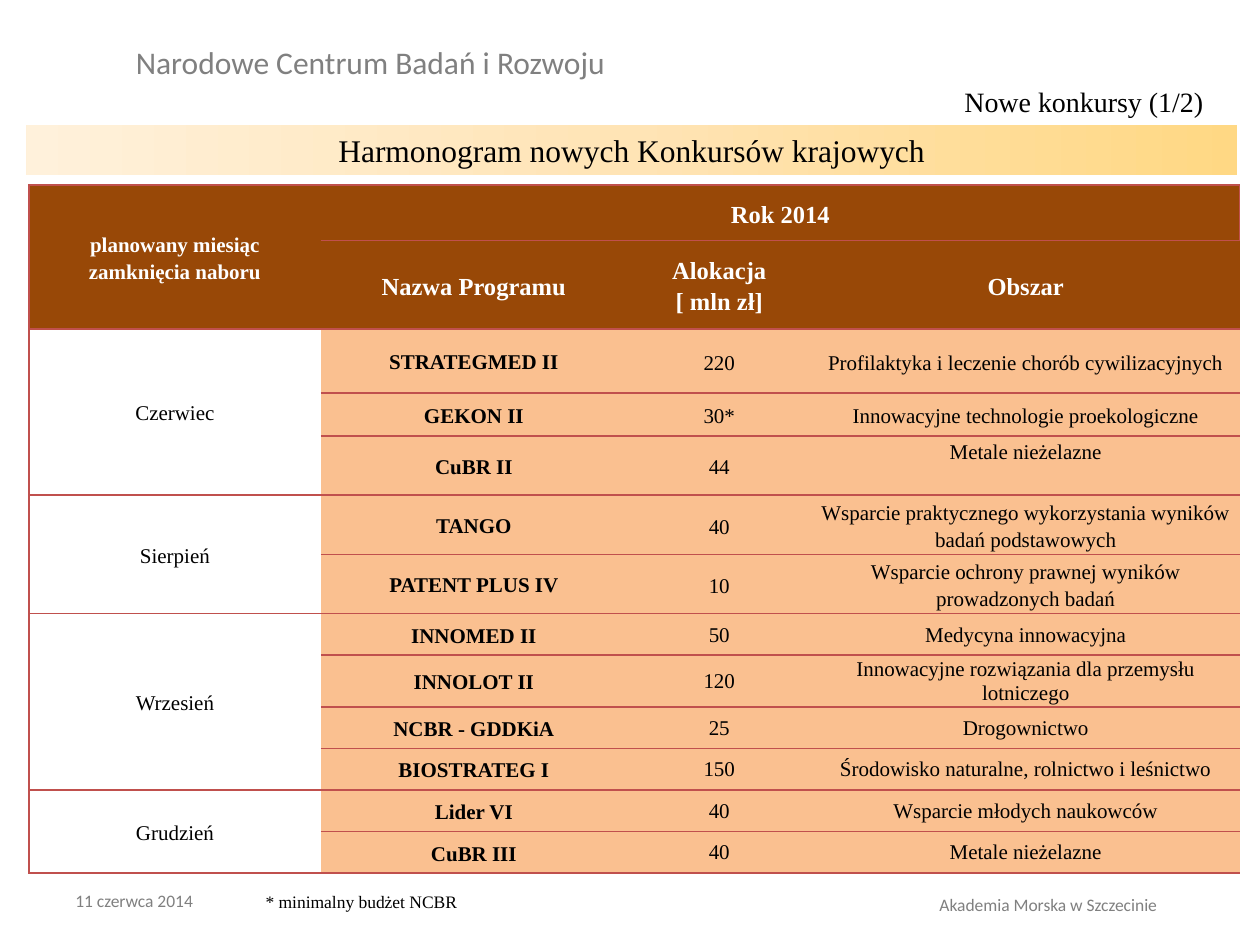
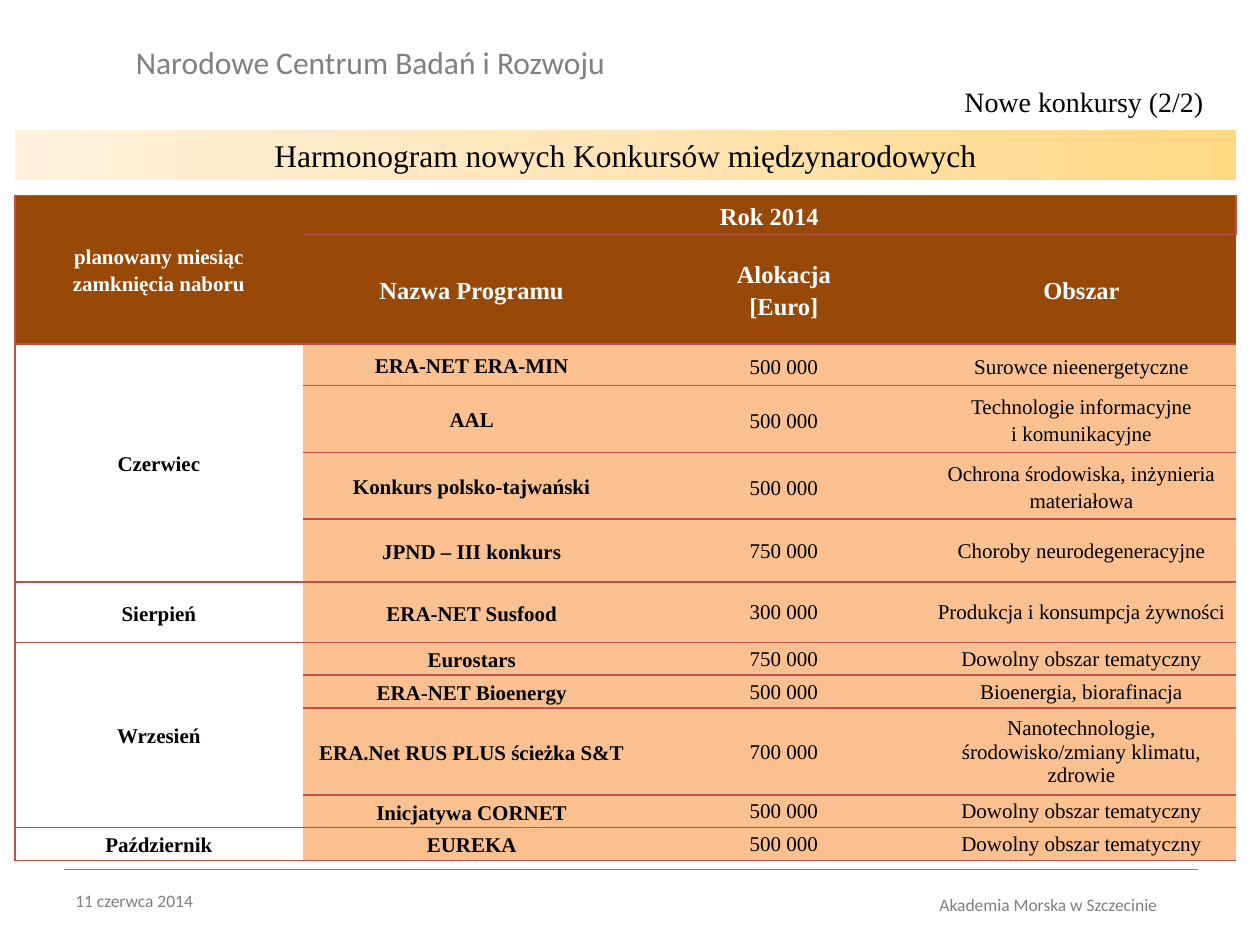
from copy import deepcopy

from lxml.etree import SubElement
from pptx import Presentation
from pptx.dml.color import RGBColor
from pptx.enum.shapes import MSO_CONNECTOR, MSO_SHAPE
from pptx.enum.text import MSO_ANCHOR, MSO_AUTO_SIZE, PP_ALIGN
from pptx.oxml.ns import qn
from pptx.util import Inches, Pt

WIDTH, HEIGHT = Inches(10), Inches(7.5)
COLUMN, ROW = WIDTH / 100, HEIGHT / 75
PLAIN_TABLE = "{2D5ABB26-0587-4C30-8999-92F81FD0307C}"
SERIF, SANS = "Times New Roman", "Calibri"
BLACK, WHITE, GRAY = "000000", "FFFFFF", "808080"
BROWN, PEACH, RED = "984807", "FAC090", "C0504D"
BAND_STOPS = [(0, "FFD884"), (0.5, "FFE4B5"), (1, "FFF1DB")]
MARGINS = ("margin_left", "margin_top", "margin_right", "margin_bottom")
WIDE_INSETS = (0.07, 0, 0.07, 0)
TIGHT_INSETS = (0.01, 0.01, 0.01, 0)

NATIONAL = {
    "heading": "Nowe konkursy (1/2)",
    "band": "Harmonogram nowych Konkursów krajowych",
    "band_box": (2.1, 9.9, 96.1, 4),
    "table_box": (2.3, 14.7, 96.1, 54.6),
    "columns": [2.32, 2.43, 1.47, 3.4],
    "rows": [0.44, 0.7, 0.51, 0.34, 0.47, 0.47, 0.47, 0.33, 0.41, 0.33, 0.33, 0.33, 0.33],
    "allocation": "Alokacja\n[ mln zł]",
    "bold_months": False,
    "spaced_rows": 5,
    "top_area": "CuBR II",
    "note": "* minimalny budżet NCBR",
    "months": [
        ("Czerwiec", [
            ("STRATEGMED II", "220", "Profilaktyka i leczenie chorób cywilizacyjnych"),
            ("GEKON II", "30*", "Innowacyjne technologie proekologiczne"),
            ("CuBR II", "44", "Metale nieżelazne")]),
        ("Sierpień", [
            ("TANGO", "40", "Wsparcie praktycznego wykorzystania wyników badań podstawowych"),
            ("PATENT PLUS IV", "10", "Wsparcie ochrony prawnej wyników prowadzonych badań")]),
        ("Wrzesień", [
            ("INNOMED II", "50", "Medycyna innowacyjna"),
            ("INNOLOT II", "120", "Innowacyjne rozwiązania dla przemysłu lotniczego"),
            ("NCBR - GDDKiA", "25", "Drogownictwo"),
            ("BIOSTRATEG I", "150", "Środowisko naturalne, rolnictwo i leśnictwo")]),
        ("Grudzień", [
            ("Lider VI", "40", "Wsparcie młodych naukowców"),
            ("CuBR III", "40", "Metale nieżelazne")]),
    ],
}

INTERNATIONAL = {
    "heading": "Nowe konkursy (2/2)",
    "band": "Harmonogram nowych Konkursów międzynarodowych",
    "band_box": (1.2, 10.3, 96.9, 4),
    "table_box": (1.2, 15.5, 96.9, 52.8),
    "columns": [2.28, 2.68, 2.27, 2.45],
    "rows": [0.31, 0.87, 0.33, 0.53, 0.53, 0.5, 0.48, 0.26, 0.26, 0.69, 0.26, 0.26],
    "allocation": "Alokacja\v[Euro]",
    "bold_months": True,
    "spaced_rows": 3,
    "top_area": None,
    "note": None,
    "months": [
        ("Czerwiec", [
            ("ERA-NET ERA-MIN", "500 000", "Surowce nieenergetyczne"),
            ("AAL", "500 000", "Technologie informacyjne\vi komunikacyjne"),
            ("Konkurs polsko-tajwański", "500 000", "Ochrona środowiska, inżynieria materiałowa"),
            ("JPND – III konkurs", "750 000", "Choroby neurodegeneracyjne")]),
        ("Sierpień", [
            ("ERA-NET Susfood", "300 000", "Produkcja i konsumpcja żywności")]),
        ("Wrzesień", [
            ("Eurostars", "750 000", "Dowolny obszar tematyczny"),
            ("ERA-NET Bioenergy", "500 000", "Bioenergia, biorafinacja"),
            ("ERA.Net RUS PLUS ścieżka S&T", "700 000",
             "Nanotechnologie, środowisko/zmiany klimatu, zdrowie"),
            ("Inicjatywa CORNET", "500 000", "Dowolny obszar tematyczny")]),
        ("Październik", [
            ("EUREKA", "500 000", "Dowolny obszar tematyczny")]),
    ],
}


def color(value):
    return RGBColor.from_string(value)


def place(box):
    left, top, width, height = box
    return [round(size) for size in (left * COLUMN, top * ROW, width * COLUMN, height * ROW)]


def set_all(target, values):
    for name, value in values.items():
        setattr(target, name, value)


def write(frame, text, size, ink=BLACK, font=SERIF, bold=False,
          align=PP_ALIGN.LEFT, spacing=None):
    frame.text = text
    for para in frame.paragraphs:
        set_all(para, {"alignment": align, "line_spacing": spacing})
        for span in para.runs:
            set_all(span.font, {"size": Pt(size), "name": font, "bold": bold})
            span.font.color.rgb = color(ink)


def add_label(page, box, text, anchor=MSO_ANCHOR.MIDDLE, **style):
    frame = page.shapes.add_textbox(*place(box)).text_frame
    set_all(frame, {"word_wrap": True, "vertical_anchor": anchor})
    write(frame, text, 10, **style)
    return frame


def add_panel(page, box, text, anchor, **style):
    panel = page.shapes.add_shape(MSO_SHAPE.RECTANGLE, *place(box))
    panel.shadow.inherit = False
    panel.line.fill.background()
    panel.text_frame.vertical_anchor = anchor
    write(panel.text_frame, text, 18, **style)
    return panel


def add_masthead(page, heading):
    title = page.shapes.title
    set_all(title, dict(zip(("left", "top", "width", "height"), place((42.9, 6.2, 53.6, 3.7)))))
    set_all(title.text_frame, {"auto_size": MSO_AUTO_SIZE.NONE, "vertical_anchor": MSO_ANCHOR.TOP})
    write(title.text_frame, heading, 16, align=PP_ALIGN.RIGHT)
    institution = add_panel(page, (9.8, 2.9, 56.7, 3.5), "Narodowe Centrum Badań i Rozwoju",
                            MSO_ANCHOR.TOP, ink=GRAY, font=SANS)
    institution.fill.solid()
    institution.fill.fore_color.rgb = color(WHITE)


def add_band(page, box, text):
    band = add_panel(page, box, text, MSO_ANCHOR.MIDDLE, align=PP_ALIGN.CENTER)
    band.fill.gradient()
    band.fill.gradient_angle = 180
    stops = band._element.spPr.find(".//" + qn("a:gsLst"))
    stops.insert(1, deepcopy(stops[0]))
    for stop, (position, shade) in zip(band.fill.gradient_stops, BAND_STOPS):
        stop.position = position
        stop.color.rgb = color(shade)


def add_footer(page, note):
    left, top, width, _ = place((5.1, 69, 90, 0))
    rule = page.shapes.add_connector(MSO_CONNECTOR.STRAIGHT, left, top, left + width, top)
    rule.line.color.rgb = color(GRAY)
    rule.line.width = Pt(0.75)
    SubElement(rule._element.spPr, qn("a:effectLst"))
    add_label(page, (5, 69.5, 23.3, 4), "11 czerwca 2014", ink=GRAY, font=SANS)
    host = add_label(page, (70.5, 69.8, 24.4, 4), "Akademia Morska w Szczecinie",
                     ink=GRAY, font=SANS, align=PP_ALIGN.CENTER)
    host.margin_right = 0
    if note:
        add_label(page, (20.1, 70.2, 37.8, 2.7), note, MSO_ANCHOR.TOP)


def add_borders(cell, sides):
    properties = cell._tc.get_or_add_tcPr()
    for index, side in enumerate(side for side in "LRTB" if side in sides):
        line = properties.makeelement(qn("a:ln" + side), {"w": str(Pt(1))})
        SubElement(SubElement(line, qn("a:solidFill")), qn("a:srgbClr"), {"val": RED})
        properties.insert(index, line)


def fill_cell(cell, text, size=12, fill=PEACH, insets=WIDE_INSETS, sides="TB",
              anchor=MSO_ANCHOR.MIDDLE, spacing=1.15, **style):
    set_all(cell, dict(zip(MARGINS, map(Inches, insets))))
    cell.vertical_anchor = anchor
    cell.fill.solid()
    cell.fill.fore_color.rgb = color(fill)
    write(cell.text_frame, text, size, align=PP_ALIGN.CENTER, spacing=spacing, **style)
    add_borders(cell, sides)


def add_schedule(page, content):
    box = place(content["table_box"])
    rows, columns = content["rows"], content["columns"]
    table = page.shapes.add_table(len(rows), len(columns), *box).table
    table._tbl.tblPr.find(qn("a:tableStyleId")).text = PLAIN_TABLE
    set_all(table, {"first_row": False, "horz_banding": False})
    for column, share in zip(table.columns, columns):
        column.width = round(box[2] * share / sum(columns))
    for row, share in zip(table.rows, rows):
        row.height = round(box[3] * share / sum(rows))

    heading = {"fill": BROWN, "ink": WHITE, "bold": True}
    table.cell(0, 0).merge(table.cell(1, 0))
    table.cell(0, 1).merge(table.cell(0, 3))
    fill_cell(table.cell(0, 0), "planowany miesiąc zamknięcia naboru", sides="LTB", **heading)
    fill_cell(table.cell(0, 1), "Rok 2014", 14, sides="RTB", **heading)
    for index, text in enumerate(("Nazwa Programu", content["allocation"], "Obszar"), 1):
        fill_cell(table.cell(1, index), text, 14, **heading)

    first = 2
    for month, programmes in content["months"]:
        last = first + len(programmes) - 1
        if last > first:
            table.cell(first, 0).merge(table.cell(last, 0))
        fill_cell(table.cell(first, 0), month, fill=WHITE, sides="LTB",
                  bold=content["bold_months"])
        for index, (name, allocation, area) in enumerate(programmes, first):
            spacing = 1.15 if index < content["spaced_rows"] + 2 else None
            area_spacing = 1.15 if name == "TANGO" else spacing
            anchor = MSO_ANCHOR.TOP if name == content["top_area"] else MSO_ANCHOR.MIDDLE
            fill_cell(table.cell(index, 1), name, bold=True)
            fill_cell(table.cell(index, 2), allocation, insets=TIGHT_INSETS, spacing=spacing)
            fill_cell(table.cell(index, 3), area, insets=TIGHT_INSETS, anchor=anchor,
                      spacing=area_spacing)
        first = last + 1


def add_page(deck, content):
    page = deck.slides.add_slide(deck.slide_layouts.get_by_name("Title Only"))
    add_masthead(page, content["heading"])
    add_band(page, content["band_box"], content["band"])
    add_footer(page, content["note"])
    add_schedule(page, content)


def main():
    deck = Presentation()
    set_all(deck, {"slide_width": WIDTH, "slide_height": HEIGHT})
    for content in (NATIONAL, INTERNATIONAL):
        add_page(deck, content)
    deck.save("out.pptx")


if __name__ == "__main__":
    main()
